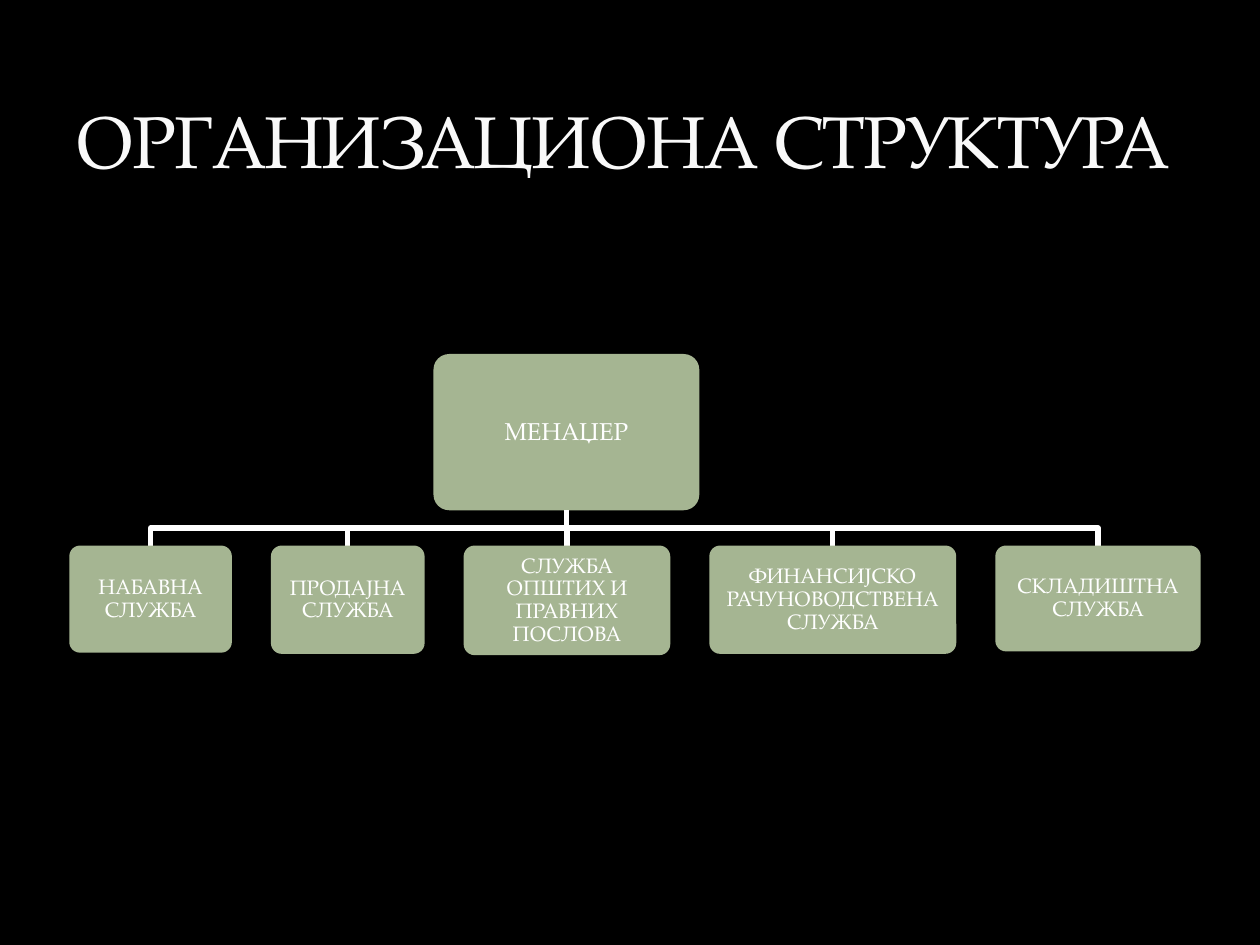
from dataclasses import dataclass

from pptx import Presentation
from pptx.dml.color import RGBColor
from pptx.enum import shapes, text
from pptx.util import Inches, Pt

BLACK = RGBColor(0x00, 0x00, 0x00)
WHITE = RGBColor(0xFF, 0xFF, 0xFF)
PALE = RGBColor(0xF9, 0xF9, 0xF9)
SAGE = RGBColor(0xA5, 0xB5, 0x92)
FONT = "TeX Gyre Pagella"

LEFT, TOP, GAP = 0.55, 4.33, 0.31


@dataclass
class Unit:
    label: str
    width: float
    height: float
    left: float = 0
    top: float = TOP
    size: int = 12
    inset: float = 0.05

    @property
    def mid(self) -> float:
        return self.left + self.width / 2


BOSS = Unit("МЕНАЏЕР", 2.11, 1.24, 3.44, 2.81, 14, 0.06)
TEAM = [
    Unit("НАБАВНА СЛУЖБА", 1.29, 0.85),
    Unit("ПРОДАЈНА СЛУЖБА", 1.22, 0.86),
    Unit("СЛУЖБА ОПШТИХ И ПРАВНИХ ПОСЛОВА", 1.64, 0.87),
    Unit("ФИНАНСИЈСКО РАЧУНОВОДСТВЕНА СЛУЖБА", 1.96, 0.86),
    Unit("СКЛАДИШТНА СЛУЖБА", 1.63, 0.84),
]


def style(para, size: int, color: RGBColor) -> None:
    para.font.name = FONT
    para.font.size = Pt(size)
    para.font.color.rgb = color


def add_title(slide, label: str) -> None:
    box = slide.shapes.add_textbox(Inches(0.5), Inches(0.17), Inches(9), Inches(1.33))
    frame = box.text_frame
    frame.word_wrap = True
    frame.vertical_anchor = text.MSO_ANCHOR.BOTTOM
    para = frame.paragraphs[0]
    run = para.add_run()
    run.text = label
    run._r.get_or_add_rPr().set("spc", "-100")
    style(para, 42, PALE)


def add_unit(slide, unit: Unit) -> None:
    box = slide.shapes.add_shape(
        shapes.MSO_SHAPE.ROUNDED_RECTANGLE,
        Inches(unit.left), Inches(unit.top), Inches(unit.width), Inches(unit.height),
    )
    box.adjustments[0] = 0.1
    box.shadow.inherit = False
    box.fill.solid()
    box.fill.fore_color.rgb = SAGE
    box.line.fill.background()
    frame = box.text_frame
    frame.word_wrap = True
    frame.vertical_anchor = text.MSO_ANCHOR.MIDDLE
    frame.margin_left = frame.margin_right = Inches(unit.inset)
    frame.margin_top = frame.margin_bottom = Inches(unit.inset)
    para = frame.paragraphs[0]
    para.text = unit.label
    para.alignment = text.PP_ALIGN.CENTER
    para.line_spacing = 0.9
    style(para, unit.size, WHITE)


def add_link(slide, boss: Unit, unit: Unit) -> None:
    """Draw an elbow line from the foot of boss to the head of unit."""
    foot = boss.top + boss.height
    bend = (foot + unit.top) / 2
    points = [(boss.mid, foot), (boss.mid, bend), (unit.mid, bend), (unit.mid, unit.top)]
    start, *rest = [(Inches(x), Inches(y)) for x, y in points]
    path = slide.shapes.build_freeform(*start)
    path.add_line_segments(rest, close=False)
    link = path.convert_to_shape()
    link.shadow.inherit = False
    link.fill.background()
    link.line.color.rgb = WHITE
    link.line.width = Pt(3)


def main() -> None:
    deck = Presentation()
    deck.slide_width, deck.slide_height = Inches(10), Inches(7.5)
    slide = deck.slides.add_slide(deck.slide_layouts[6])
    slide.background.fill.solid()
    slide.background.fill.fore_color.rgb = BLACK

    add_title(slide, "ОРГАНИЗАЦИОНА СТРУКТУРА")
    add_unit(slide, BOSS)
    left = LEFT
    for unit in TEAM:
        unit.left = left
        add_link(slide, BOSS, unit)
        add_unit(slide, unit)
        left += unit.width + GAP
    deck.save("out.pptx")


if __name__ == "__main__":
    main()
